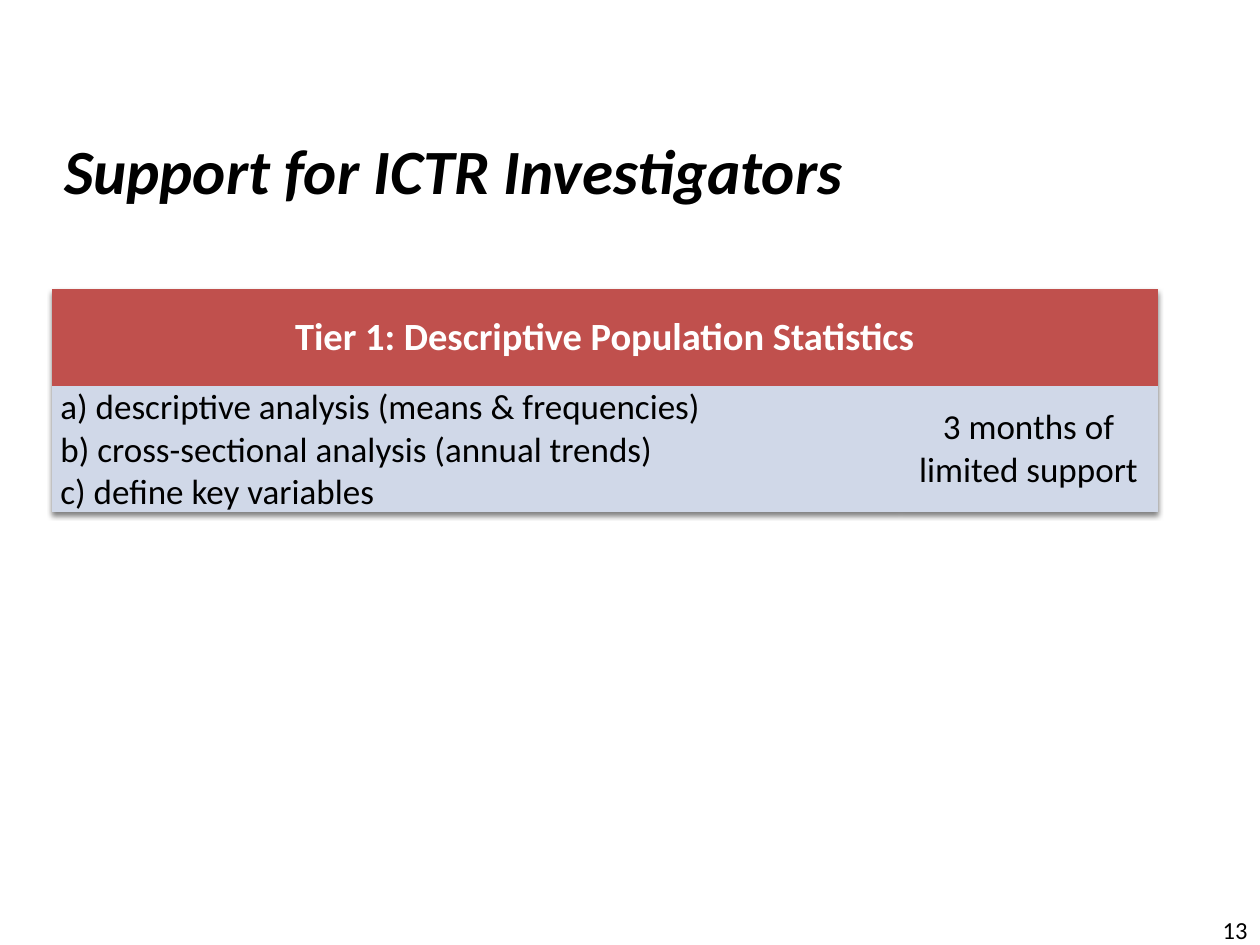
from lxml import etree
from pptx import Presentation
from pptx import util as u
from pptx.dml.color import RGBColor
from pptx.enum import text
from pptx.oxml import ns

COLORS = {"ink": "000000", "white": "FFFFFF", "header": "C0504D", "body": "D0D8E8"}
LEFT = 29.5
PLAIN_STYLE = "{2D5ABB26-0587-4C30-8999-92F81FD0307C}"
SOFT_SHADOW = (
    f'<a:effectLst {ns.nsdecls("a")}>'
    '<a:outerShdw blurRad="40000" dist="23000" dir="5400000" rotWithShape="0">'
    '<a:srgbClr val="000000"><a:alpha val="50000"/></a:srgbClr>'
    '</a:outerShdw></a:effectLst>'
)


class SlideBuilder:
    """Holds the style and the current slide."""

    font = "Calibri"

    def __init__(self, slide):
        self.slide = slide

    def set_words(self, frame, words, size, color="ink", align="LEFT", bold=False, italic=False):
        frame.text = words
        for paragraph in frame.paragraphs:
            paragraph.alignment = text.PP_ALIGN[align]
            for run in paragraph.runs:
                run.font.name = self.font
                run.font.size = u.Pt(size)
                run.font.bold = bold
                run.font.italic = italic
                run.font.color.rgb = RGBColor.from_string(COLORS[color])

    def label(self, box, words, size, **style):
        frame = self.slide.shapes.add_textbox(*map(u.Pt, box)).text_frame
        frame.word_wrap = True
        frame.vertical_anchor = text.MSO_ANCHOR.MIDDLE
        self.set_words(frame, words, size, **style)

    def table(self, left, top, widths, heights):
        table = self.slide.shapes.add_table(
            len(heights), len(widths), u.Pt(left), u.Pt(top),
            u.Pt(sum(widths)), u.Pt(sum(heights))).table
        for column, width in zip(table.columns, widths):
            column.width = u.Pt(width)
        for row, height in zip(table.rows, heights):
            row.height = u.Pt(height)
        # Borderless style with a soft shadow below
        properties = table._tbl.tblPr
        properties.find(ns.qn("a:tableStyleId")).text = PLAIN_STYLE
        properties.insert(0, etree.fromstring(SOFT_SHADOW))
        return table

    def cell(self, cell, words, size, fill, **style):
        cell.fill.solid()
        cell.fill.fore_color.rgb = RGBColor.from_string(COLORS[fill])
        cell.vertical_anchor = text.MSO_ANCHOR.MIDDLE
        cell.margin_left = cell.margin_right = u.Pt(5)
        cell.margin_top = cell.margin_bottom = u.Pt(0)
        self.set_words(cell.text_frame, words, size, **style)


def main():
    deck = Presentation()
    deck.slide_width, deck.slide_height = u.Pt(720), u.Pt(540)
    builder = SlideBuilder(deck.slides.add_slide(deck.slide_layouts[6]))

    # Title and page number
    builder.label((LEFT, 69, 661, 55.5), "Support for ICTR Investigators", 36,
                  bold=True, italic=True)
    builder.label((558, 517, 162, 29), "13", 14, align="RIGHT")

    # Support tier
    tier = builder.table(LEFT, 165, widths=(484.5, 147.5), heights=(55.5, 64))
    tier.cell(0, 0).merge(tier.cell(0, 1))
    builder.cell(tier.cell(0, 0), "Tier 1: Descriptive Population Statistics", 22,
                 "header", color="white", align="CENTER", bold=True)
    analyses = (
        "a) descriptive analysis (means & frequencies)",
        "b) cross-sectional analysis (annual trends)",
        "c) define key variables",
    )
    builder.cell(tier.cell(1, 0), "\n".join(analyses), 20, "body")
    builder.cell(tier.cell(1, 1), "3 months of limited support", 20, "body", align="CENTER")

    deck.save("out.pptx")


if __name__ == "__main__":
    main()
